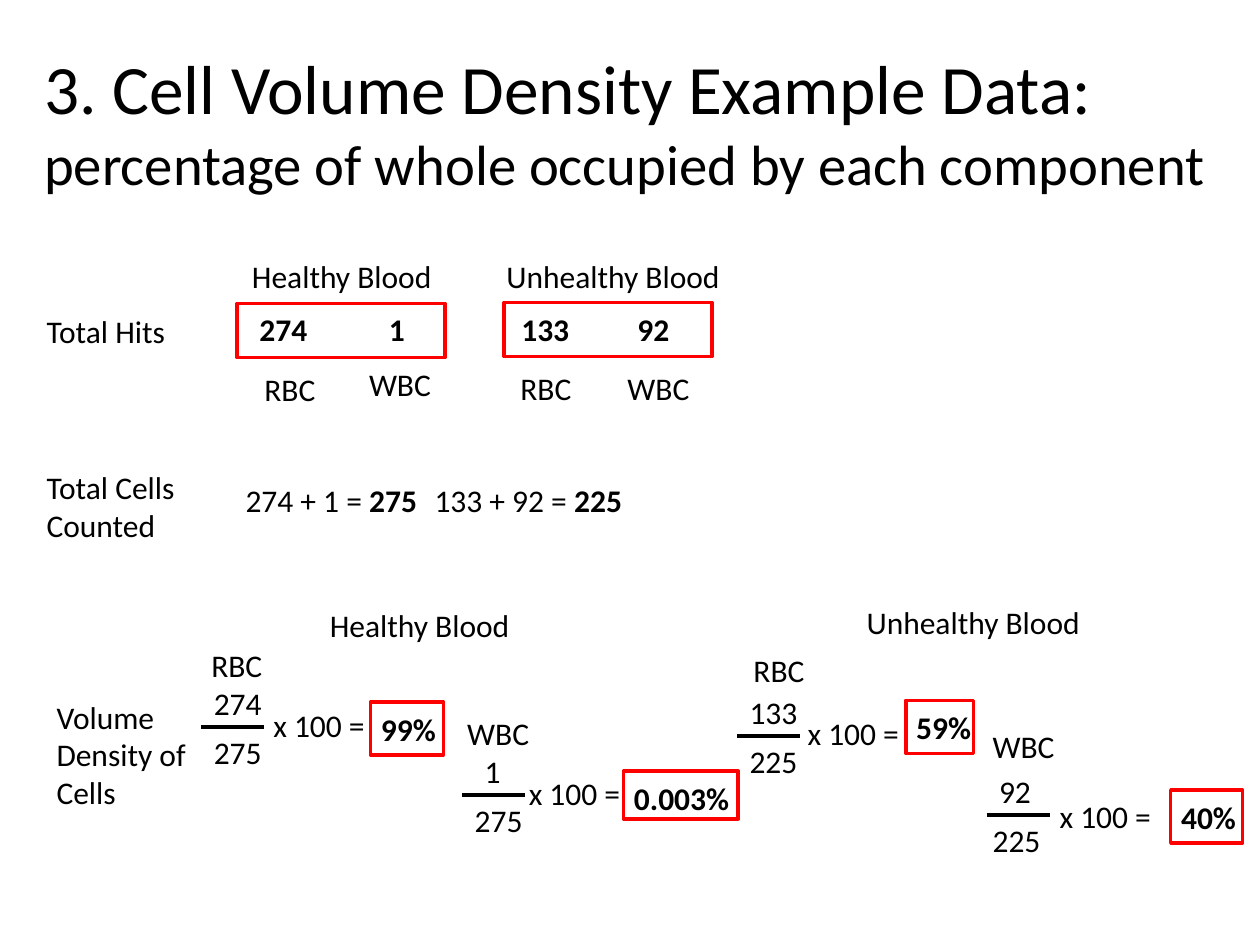
from dataclasses import dataclass

from lxml import etree
from pptx import Presentation
from pptx import util as u
from pptx.dml.color import RGBColor
from pptx.enum import shapes, text
from pptx.oxml.ns import qn


@dataclass(frozen=True)
class Theme:
    font: str = "Calibri"
    ink: RGBColor = RGBColor(0, 0, 0)
    accent: RGBColor = RGBColor(255, 0, 0)
    title: float = 39.6
    subtitle: float = 32.4
    body: float = 18
    box_line: float = 2
    bar_line: float = 2.25


THEME = Theme()
ROW = 1.02  # height of one line of body text, in cm


def add_span(para, words, size=THEME.body, bold=False):
    span = para.add_run()
    span.text = words
    span.font.name = THEME.font
    span.font.size = u.Pt(size)
    span.font.bold = bold
    span.font.color.rgb = THEME.ink


def add_text_box(page, left, top, width, height=ROW):
    """Add an empty wrapping text box and return its frame."""
    box = page.shapes.add_textbox(u.Cm(left), u.Cm(top), u.Cm(width), u.Cm(height))
    box.text_frame.word_wrap = True
    return box.text_frame


def add_label(page, words, left, top, width=2.54, height=ROW, bold=False):
    frame = add_text_box(page, left, top, width, height)
    add_span(frame.paragraphs[0], words, bold=bold)


def add_title(page, title, subtitle):
    frame = add_text_box(page, 0.64, 0.64, 23.92, 3.6)
    frame.vertical_anchor = text.MSO_ANCHOR.MIDDLE
    para = frame.paragraphs[0]
    add_span(para, title, THEME.title)
    para.add_line_break()
    add_span(para, subtitle, THEME.subtitle)


def add_red_box(page, left, top, width, height):
    box = page.shapes.add_shape(shapes.MSO_SHAPE.RECTANGLE,
                                u.Cm(left), u.Cm(top), u.Cm(width), u.Cm(height))
    box.shadow.inherit = False
    box.fill.background()
    box.line.color.rgb = THEME.accent
    box.line.width = u.Pt(THEME.box_line)


def add_fraction_bar(page, left, top):
    bar = page.shapes.add_connector(shapes.MSO_CONNECTOR.STRAIGHT,
                                    u.Cm(left), u.Cm(top), u.Cm(left + 1.27), u.Cm(top))
    bar.line.color.rgb = THEME.ink
    bar.line.width = u.Pt(THEME.bar_line)
    etree.SubElement(bar._element.spPr, qn("a:effectLst"))


def add_density(page, cell, cell_at, top_number, total, bar, shifts, times_at, result, result_box):
    """Add a cell name, its fraction times 100, and the boxed percentage.

    shifts moves the numerator and the denominator right of the bar's start.
    """
    left, top = bar
    add_label(page, cell, *cell_at, width=1.9)
    add_label(page, top_number, left + shifts[0], top - 0.99, width=1.8)
    add_label(page, total, left + shifts[1], top, width=1.8)
    add_fraction_bar(page, left, top)
    add_label(page, "x 100 =", *times_at)
    add_label(page, result, result_box[0] - 0.04, result_box[1] + 0.03, bold=True)
    add_red_box(page, *result_box)


def add_hits(page):
    for words, left in (("274", 4.98), ("1", 7.59), ("133", 10.26), ("92", 12.6)):
        add_label(page, words, left, 6.12, width=1.8, bold=True)
    add_red_box(page, 4.78, 6.12, 4.19, 1.09)
    add_red_box(page, 10.16, 6.1, 4.19, 1.09)
    for cell, left, top in (("RBC", 5.08, 7.34), ("WBC", 7.19, 7.24),
                            ("RBC", 10.24, 7.32), ("WBC", 12.4, 7.32)):
        add_label(page, cell, left, top, width=1.9)


def add_totals(page):
    para = add_text_box(page, 4.7, 9.58, 14.55).paragraphs[0]
    for words, bold in (("274 + 1 = ", False), ("275", True),
                        ("\t133 + 92 = ", False), ("225", True)):
        add_span(para, words, bold=bold)


def main():
    deck = Presentation()
    deck.slide_width, deck.slide_height = u.Cm(25.4), u.Cm(19.05)
    page = deck.slides.add_slide(deck.slide_layouts[6])

    add_title(page, "3. Cell Volume Density Example Data:",
              "percentage of whole occupied by each component")

    add_label(page, "Total Hits", 0.69, 6.17, 3.38)
    add_label(page, "Total Cells Counted", 0.69, 9.32, 3.81, 1.8)
    add_label(page, "Volume Density of Cells", 0.89, 13.94, 3.81, 2.57)

    for words, left, top in (("Healthy Blood", 4.83, 5.05), ("Unhealthy Blood", 9.96, 5.05),
                             ("Healthy Blood", 6.4, 12.09), ("Unhealthy Blood", 17.22, 12.04)):
        add_label(page, words, left, top, 5.08)

    add_hits(page)
    add_totals(page)

    add_density(page, "RBC", (4.01, 12.9), "274", "275", (4.06, 14.66), (0, 0),
                (5.26, 14.1), "99%", (7.47, 14.15, 1.47, 1.07))
    add_density(page, "WBC", (9.17, 14.27), "1", "275", (9.32, 16.03), (0.2, 0),
                (10.41, 15.47), "0.003%", (12.57, 15.54, 2.31, 0.97))
    add_density(page, "RBC", (14.94, 13), "133", "225", (14.86, 14.83), (0, 0),
                (16.03, 14.27), "59%", (18.26, 14.12, 1.37, 1.07))
    add_density(page, "WBC", (19.76, 14.53), "92", "225", (19.89, 16.43), (0, -0.13),
                (21.11, 15.95), "40%", (23.6, 15.93, 1.45, 1.07))

    deck.save("out.pptx")


if __name__ == "__main__":
    main()
